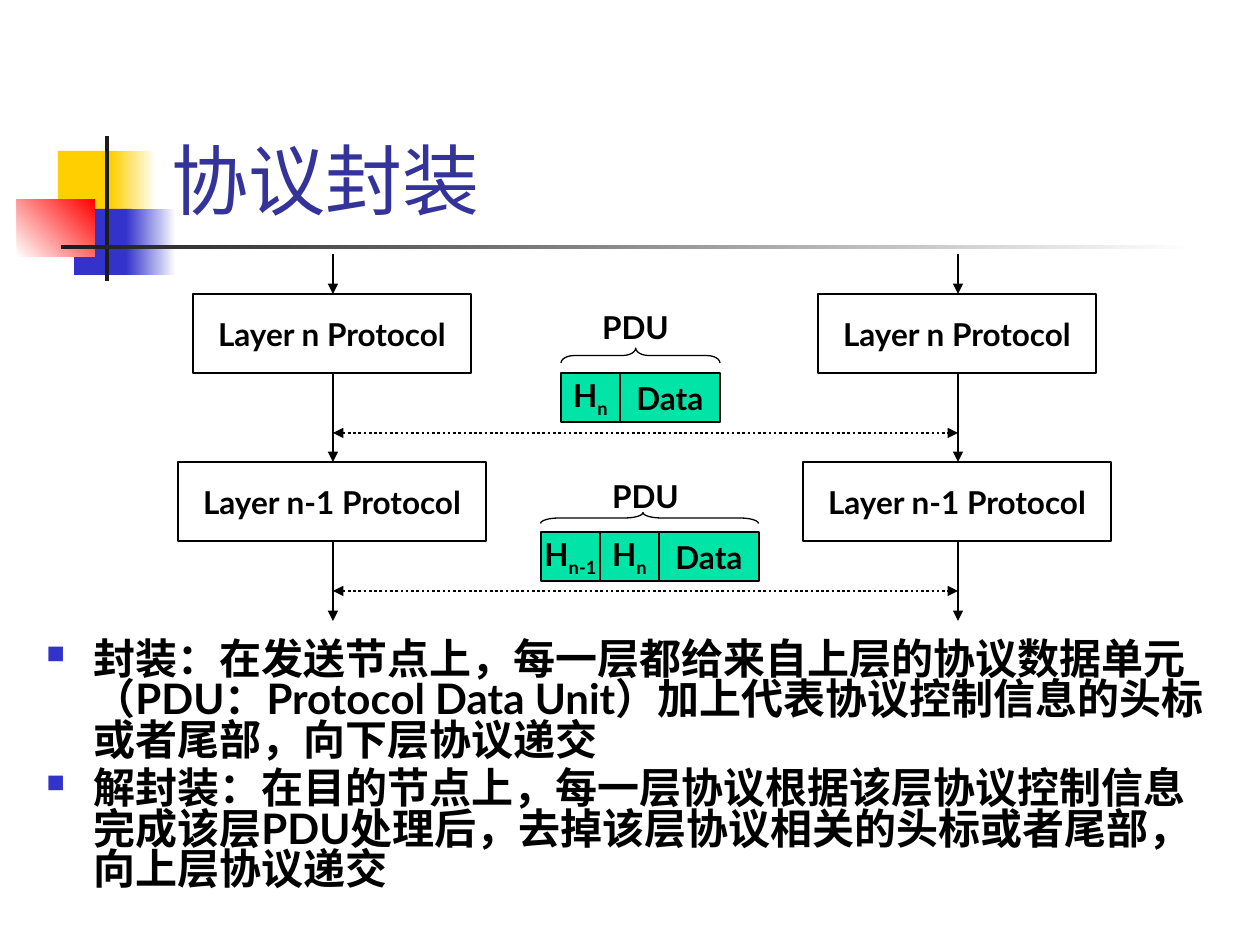
"""Build the protocol encapsulation slide."""
from dataclasses import dataclass
from typing import Optional

from lxml import etree
from pptx import Presentation
from pptx import util as u
from pptx.dml.color import RGBColor
from pptx.enum import dml, shapes, text
from pptx.oxml.ns import qn

SCALE = 914400 / 126
FONT = "Lato"
BLACK = RGBColor(0x00, 0x00, 0x00)
WHITE = RGBColor(0xFF, 0xFF, 0xFF)
YELLOW = RGBColor(0xFF, 0xCF, 0x01)
BLUE = RGBColor(0x33, 0x33, 0xCC)
RED = RGBColor(0xFF, 0x00, 0x00)
CHARCOAL = RGBColor(0x1C, 0x1C, 0x1C)
NAVY = RGBColor(0x33, 0x33, 0x99)
GREEN = RGBColor(0x00, 0xE4, 0xA8)


@dataclass(frozen=True)
class Area:
    left: int
    top: int
    width: int
    height: int

    def emu(self) -> tuple:
        return tuple(px(n) for n in (self.left, self.top, self.width, self.height))


@dataclass(frozen=True)
class Block:
    area: Area
    start: RGBColor
    end: Optional[RGBColor] = None
    angle: int = 0


@dataclass(frozen=True)
class Cell:
    label: str
    subscript: str
    width: int


@dataclass(frozen=True)
class Unit:
    label: Area
    brace: Area
    bend: float
    top: int
    cells: tuple


HEADER = Cell("H", "n", 59)
LOWER_HEADER = Cell("H", "n-1", 59)
DATA = Cell("Data", "", 100)

ORNAMENTS = (
    Block(Area(58, 151, 60, 66), YELLOW),
    Block(Area(111, 151, 45, 66), YELLOW, WHITE),
    Block(Area(74, 209, 58, 66), BLUE),
    Block(Area(126, 209, 50, 66), BLUE, WHITE),
    Block(Area(17, 199, 78, 58), WHITE, RED, 45),
    Block(Area(105, 136, 4, 145), CHARCOAL),
    Block(Area(61, 245, 1134, 4), CHARCOAL, WHITE),
)
UNITS = (
    Unit(Area(571, 302, 129, 50), Area(561, 348, 159, 15), 0.89, 373, (HEADER, DATA)),
    Unit(Area(581, 471, 129, 50), Area(541, 512, 218, 11), 1.66, 532,
         (LOWER_HEADER, HEADER, DATA)),
)
LANES = (333, 958)
LAYERS = (("Layer n Protocol", 294, 278), ("Layer n-1 Protocol", 462, 308))
LAYER_HEIGHT = 79
FLOWS = ((254, 294), (373, 462), (541, 621))
PEER_LINKS = (433, 591)
POINTS = (
    "封装：在发送节点上，每一层都给来自上层的协议数据单元（PDU：Protocol Data Unit）"
    "加上代表协议控制信息的头标或者尾部，向下层协议递交",
    "解封装：在目的节点上，每一层协议根据该层协议控制信息完成该层PDU处理后，"
    "去掉该层协议相关的头标或者尾部，向上层协议递交",
)


def px(length: float) -> int:
    return round(length * SCALE)


def add_span(para, words: str, size: int = 18, color: RGBColor = BLACK, bold: bool = True):
    span = para.add_run()
    span.text = words
    font = span.font
    font.name, font.size, font.bold = FONT, u.Pt(size), bold
    font.color.rgb = color
    return span


def add_shape(page, kind, area: Area):
    shape = page.shapes.add_shape(kind, *area.emu())
    shape.shadow.inherit = False
    return shape


def outline(shape) -> None:
    shape.line.color.rgb = BLACK
    shape.line.width = u.Pt(0.75)


def add_ornament(page, block: Block) -> None:
    shape = add_shape(page, shapes.MSO_SHAPE.RECTANGLE, block.area)
    shape.line.fill.background()
    if block.end is None:
        shape.fill.solid()
        shape.fill.fore_color.rgb = block.start
        return
    shape.fill.gradient()
    shape.fill.gradient_angle = block.angle
    for stop, color in zip(shape.fill.gradient_stops, (block.start, block.end)):
        stop.color.rgb = color


def add_box(page, area: Area, label: str, subscript: str = "",
            fill: Optional[RGBColor] = None) -> None:
    box = add_shape(page, shapes.MSO_SHAPE.RECTANGLE, area)
    outline(box)
    if fill is None:
        box.fill.background()
    else:
        box.fill.solid()
        box.fill.fore_color.rgb = fill
    frame = box.text_frame
    frame.word_wrap = False
    frame.vertical_anchor = text.MSO_ANCHOR.MIDDLE
    para = frame.paragraphs[0]
    para.alignment = text.PP_ALIGN.CENTER
    add_span(para, label)
    if subscript:
        add_span(para, subscript)._r.get_or_add_rPr().set("baseline", "-25000")


def add_arrow(page, start: tuple, end: tuple, peer: bool = False) -> None:
    arrow = page.shapes.add_connector(
        shapes.MSO_CONNECTOR.STRAIGHT, *(px(n) for n in start + end))
    arrow.line.color.rgb = BLACK
    arrow.line.width = u.Pt(1.5 if peer else 0.75)
    if peer:
        arrow.line.dash_style = dml.MSO_LINE.ROUND_DOT
    line = arrow.line._get_or_add_ln()
    for tag in ("a:headEnd", "a:tailEnd") if peer else ("a:tailEnd",):
        etree.SubElement(line, qn(tag), type="triangle")
    etree.SubElement(arrow._element.spPr, qn("a:effectLst"))


def add_brace(page, area: Area, bend: float) -> None:
    shift = (area.width - area.height) // 2
    upright = Area(area.left + shift, area.top - shift, area.height, area.width)
    brace = add_shape(page, shapes.MSO_SHAPE.RIGHT_BRACE, upright)
    brace.rotation = 270
    brace.adjustments[0], brace.adjustments[1] = bend, 0.47
    brace.fill.background()
    outline(brace)


def add_unit(page, unit: Unit) -> None:
    left = unit.brace.left
    for cell in unit.cells:
        add_box(page, Area(left, unit.top, cell.width, 49), cell.label, cell.subscript, GREEN)
        left += cell.width
    add_brace(page, unit.brace, unit.bend)
    frame = page.shapes.add_textbox(*unit.label.emu()).text_frame
    frame.word_wrap = True
    frame.paragraphs[0].alignment = text.PP_ALIGN.CENTER
    add_span(frame.paragraphs[0], "PDU")


def add_bullet(para) -> None:
    props = para._p.get_or_add_pPr()
    props.set("marL", str(px(47)))
    props.set("indent", str(px(-47)))
    color = etree.SubElement(props, qn("a:buClr"))
    etree.SubElement(color, qn("a:srgbClr"), val=str(BLUE))
    etree.SubElement(props, qn("a:buSzPct"), val="60000")
    etree.SubElement(props, qn("a:buChar"), char="■")


def add_points(page) -> None:
    frame = page.shapes.add_textbox(*Area(34, 636, 1201, 284).emu()).text_frame
    frame.word_wrap = True
    for index, words in enumerate(POINTS):
        para = frame.add_paragraph() if index else frame.paragraphs[0]
        add_bullet(para)
        para.line_spacing = 0.8
        if index:
            para.space_before = u.Pt(4.8)
        add_span(para, words, 24)


def set_title(page) -> None:
    title = page.shapes.title
    title.left, title.top, title.width, title.height = Area(159, 29, 1074, 202).emu()
    frame = title.text_frame
    frame.auto_size = text.MSO_AUTO_SIZE.NONE
    frame.vertical_anchor = text.MSO_ANCHOR.BOTTOM
    frame.paragraphs[0].alignment = text.PP_ALIGN.LEFT
    add_span(frame.paragraphs[0], "协议封装", 44, NAVY, False)


def main() -> None:
    deck = Presentation()
    deck.slide_width, deck.slide_height = px(1260), px(945)
    page = deck.slides.add_slide(deck.slide_layouts[5])
    for block in ORNAMENTS:
        add_ornament(page, block)
    set_title(page)
    add_points(page)
    for lane in LANES:
        for label, top, width in LAYERS:
            add_box(page, Area(lane - 1 - width // 2, top, width, LAYER_HEIGHT), label)
        for start, end in FLOWS:
            add_arrow(page, (lane, start), (lane, end))
    for level in PEER_LINKS:
        add_arrow(page, (LANES[0], level), (LANES[1], level), peer=True)
    for unit in UNITS:
        add_unit(page, unit)
    deck.save("out.pptx")


if __name__ == "__main__":
    main()
